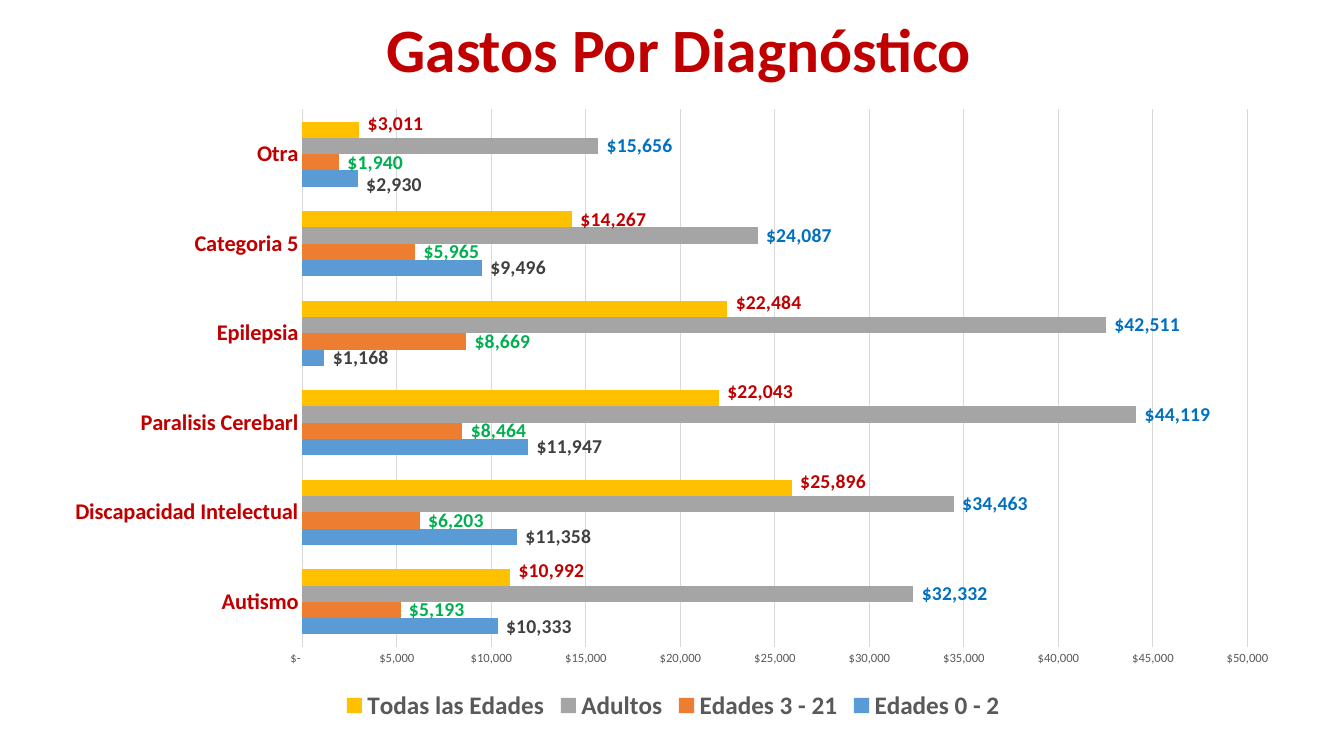
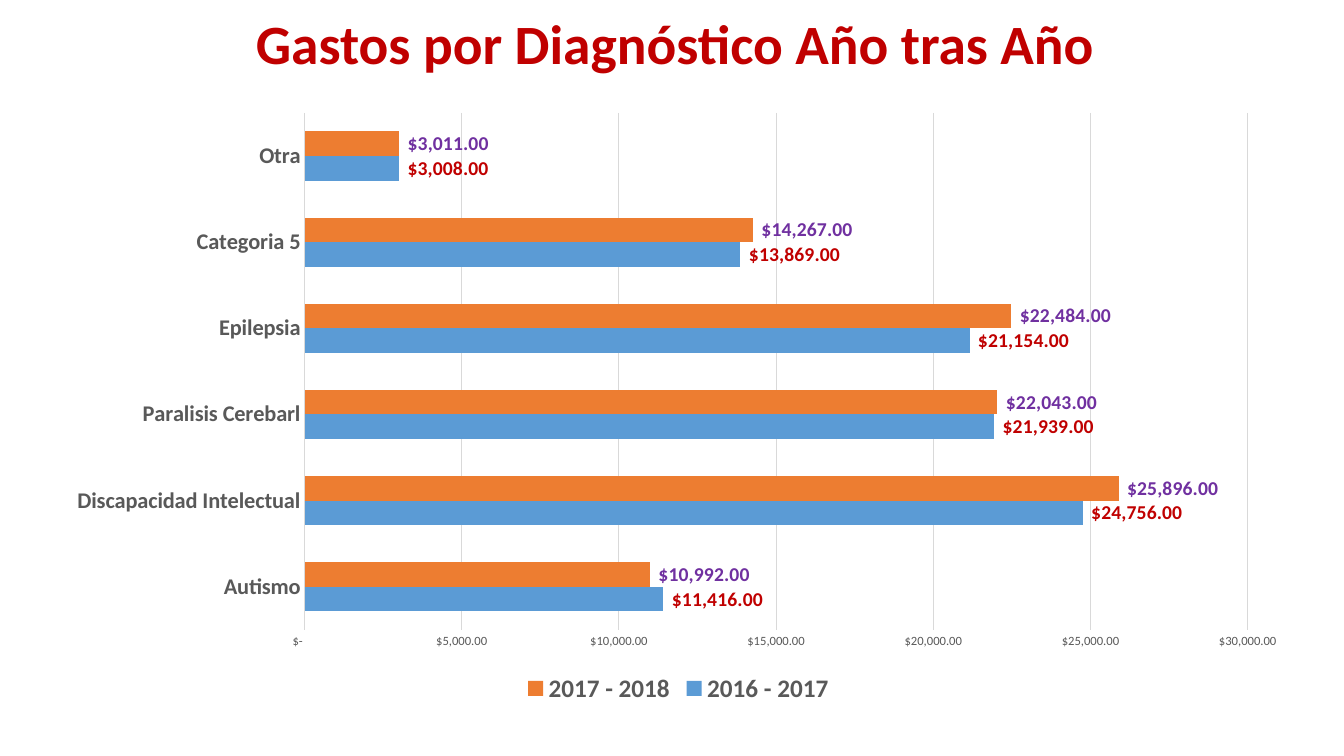
from dataclasses import dataclass

from pptx import Presentation
from pptx.chart.data import CategoryChartData as Data
from pptx.dml.color import RGBColor as Rgb
from pptx.enum.chart import XL_CHART_TYPE as Kind
from pptx.enum.chart import XL_LABEL_POSITION as Spot
from pptx.enum.chart import XL_LEGEND_POSITION as Side
from pptx.enum.chart import XL_TICK_MARK as Tick
from pptx.enum.text import MSO_ANCHOR as Anchor
from pptx.enum.text import MSO_AUTO_SIZE as Fit
from pptx.enum.text import PP_ALIGN as Align
from pptx.oxml import parse_xml
from pptx.util import Cm, Pt


@dataclass(frozen=True)
class Theme:
    """Colours, font and type sizes of the deck."""
    font: str = "Calibri"
    red: str = "C00000"
    ink: str = "404040"
    gray: str = "595959"
    grid: str = "D9D9D9"
    black: str = "000000"
    green: str = "00B050"
    navy: str = "0070C0"
    plum: str = "7030A0"
    blue: str = "5B9BD5"
    orange: str = "ED7D31"
    silver: str = "A5A5A5"
    gold: str = "FFC000"
    base: float = 10
    tick: float = 9
    label: float = 14
    cat: float = 16
    legend: float = 18


@dataclass(frozen=True)
class Series:
    """One set of bars; shift maps a point to its label's vertical offset."""
    name: str
    vals: tuple
    fill: str
    text: str
    shift: tuple = ()


T = Theme()
CATS = ("Autismo", "Discapacidad Intelectual", "Paralisis Cerebarl",
        "Epilepsia", "Categoria 5", "Otra")
TOTALS = (10992, 25896, 22043, 22484, 14267, 3011)
NS = "http://schemas.openxmlformats.org/drawingml/2006/chart"


def money(num):
    """Return the accounting format around a number pattern."""
    return f'_("$"* {num}_);_("$"* \\({num}\\);_("$"* "-"??_);_(@_)'


def style(font, size, color, bold=False):
    """Format a font."""
    font.name, font.size, font.bold = T.font, Pt(size), bold
    font.color.rgb = Rgb.from_string(color)


def add_title(slide, text, box, size):
    """Place the title in its box."""
    title = slide.shapes.title
    title.left, title.top, title.width, title.height = map(Cm, box)
    frame = title.text_frame
    frame.text = text
    frame.auto_size, frame.word_wrap = Fit.NONE, True
    frame.vertical_anchor = Anchor.MIDDLE
    para = frame.paragraphs[0]
    para.alignment, para.line_spacing = Align.CENTER, 0.9
    style(para.runs[0].font, size, T.red, True)


def style_axes(chart, color, fmt):
    """Format both axes and the gridlines."""
    cat, val = chart.category_axis, chart.value_axis
    for axis in (cat, val):
        axis.major_tick_mark = axis.minor_tick_mark = Tick.NONE
        axis.format.line.fill.background()
    style(cat.tick_labels.font, T.cat, color, True)
    style(val.tick_labels.font, T.tick, T.gray)
    val.tick_labels.number_format = fmt
    val.tick_labels.number_format_is_linked = False
    val.has_major_gridlines = True
    line = val.major_gridlines.format.line
    line.width, line.color.rgb = Pt(0.75), Rgb.from_string(T.grid)


def shift_label(bars, index, dy):
    """Move one value label by a share of the chart height."""
    label = bars.points[index].data_label
    label.position = Spot.OUTSIDE_END
    return_to = bars._element.xpath(f'c:dLbls/c:dLbl[c:idx/@val="{index}"]/c:idx')[0]
    return_to.addnext(parse_xml(
        f'<c:layout xmlns:c="{NS}"><c:manualLayout><c:x val="0"/>'
        f'<c:y val="{dy}"/></c:manualLayout></c:layout>'))
    return label


def style_bars(bars, item, fmt):
    """Colour one series and format its labels."""
    bars.format.fill.solid()
    bars.format.fill.fore_color.rgb = Rgb.from_string(item.fill)
    labels = bars.data_labels
    labels.show_value, labels.position = True, Spot.OUTSIDE_END
    labels.number_format, labels.number_format_is_linked = fmt, False
    style(labels.font, T.label, item.text, True)
    for index in item.shift:
        dy = 0.01 if item.fill == T.blue else -0.01
        style(shift_label(bars, index, dy).font, T.label, item.text, True)


def add_bars(slide, box, items, color, fmt):
    """Place the bar chart in its box."""
    data = Data(number_format=fmt)
    data.categories = CATS
    for item in items:
        data.add_series(item.name, item.vals)
    chart = slide.shapes.add_chart(Kind.BAR_CLUSTERED, *map(Cm, box), data).chart
    style(chart.font, T.base, T.black)
    chart.has_title = False
    chart.has_legend = True
    chart.legend.position = Side.BOTTOM
    chart.legend.include_in_layout = False
    style(chart.legend.font, T.legend, T.gray, True)
    style_axes(chart, color, fmt)
    plot = chart.plots[0]
    plot.gap_width, plot.vary_by_categories = 150, False
    for bars, item in zip(plot.series, items):
        style_bars(bars, item, fmt)


def add_ages(deck):
    """Build the slide of spending by age group."""
    slide = deck.slides.add_slide(deck.slide_layouts[5])
    add_title(slide, "Gastos Por Diagnóstico", (2.51, 0.2, 29.21, 2.24), 44)
    items = (
        Series("Edades 0 - 2", (10333, 11358, 11947, 1168, 9496, 2930),
               T.blue, T.ink, (5,)),
        Series("Edades 3 - 21", (5193, 6203, 8464, 8669, 5965, 1940),
               T.orange, T.green),
        Series("Adultos", (32332, 34463, 44119, 42511, 24087, 15656),
               T.silver, T.navy),
        Series("Todas las Edades", TOTALS, T.gold, T.red, (0, 1, 2, 3, 5)),
    )
    add_bars(slide, (1.27, 2.44, 31.39, 15.85), items, T.red, money("#,##0"))


def add_years(deck):
    """Build the slide of spending by year."""
    slide = deck.slides.add_slide(deck.slide_layouts[5])
    add_title(slide, "Gastos por Diagnóstico Año tras Año",
              (2.41, 0.38, 29.21, 1.57), 39.6)
    items = (
        Series("2016 - 2017", (11416, 24756, 21939, 21154, 13869, 3008),
               T.blue, T.red),
        Series("2017 - 2018", TOTALS, T.orange, T.plum),
    )
    add_bars(slide, (1.32, 2.54, 31.55, 15.32), items, T.gray, money("#,##0.00"))


def main():
    """Build and save the deck."""
    deck = Presentation()
    deck.slide_width, deck.slide_height = Cm(33.87), Cm(19.05)
    add_ages(deck)
    add_years(deck)
    deck.save("out.pptx")


if __name__ == "__main__":
    main()
